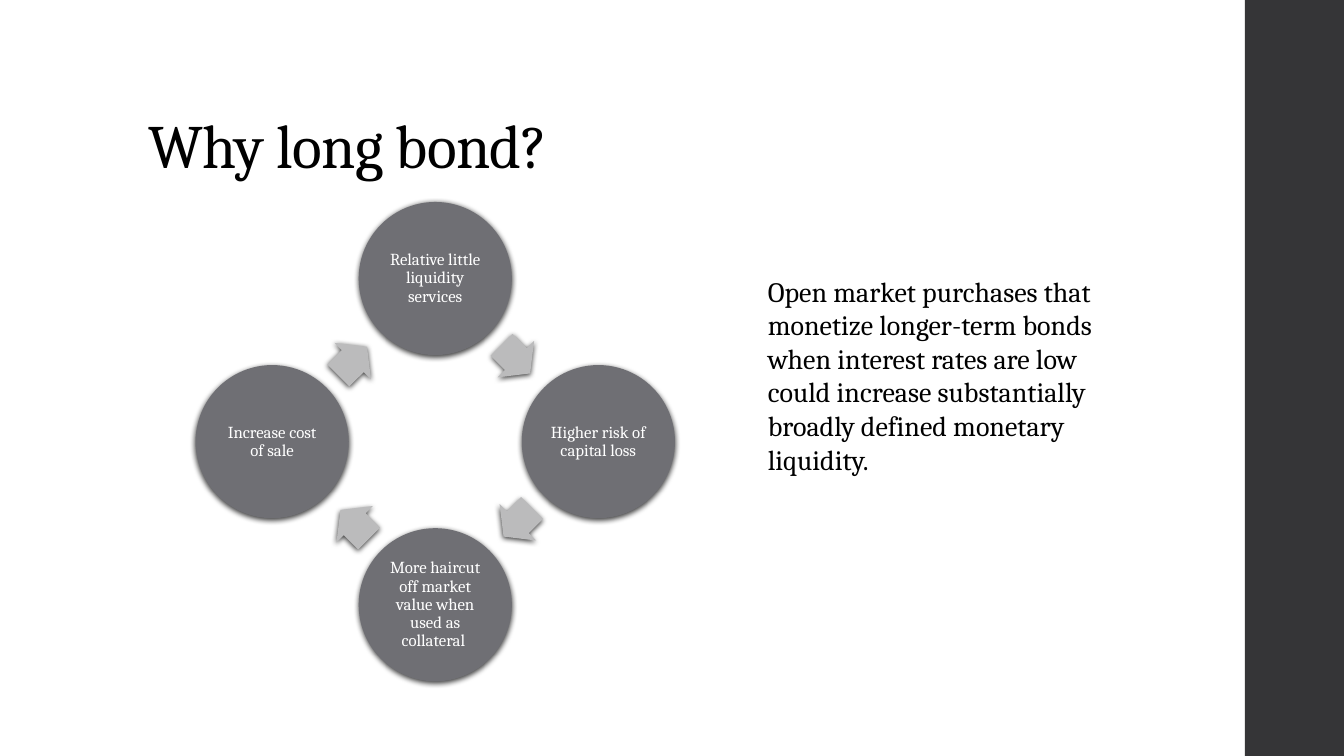
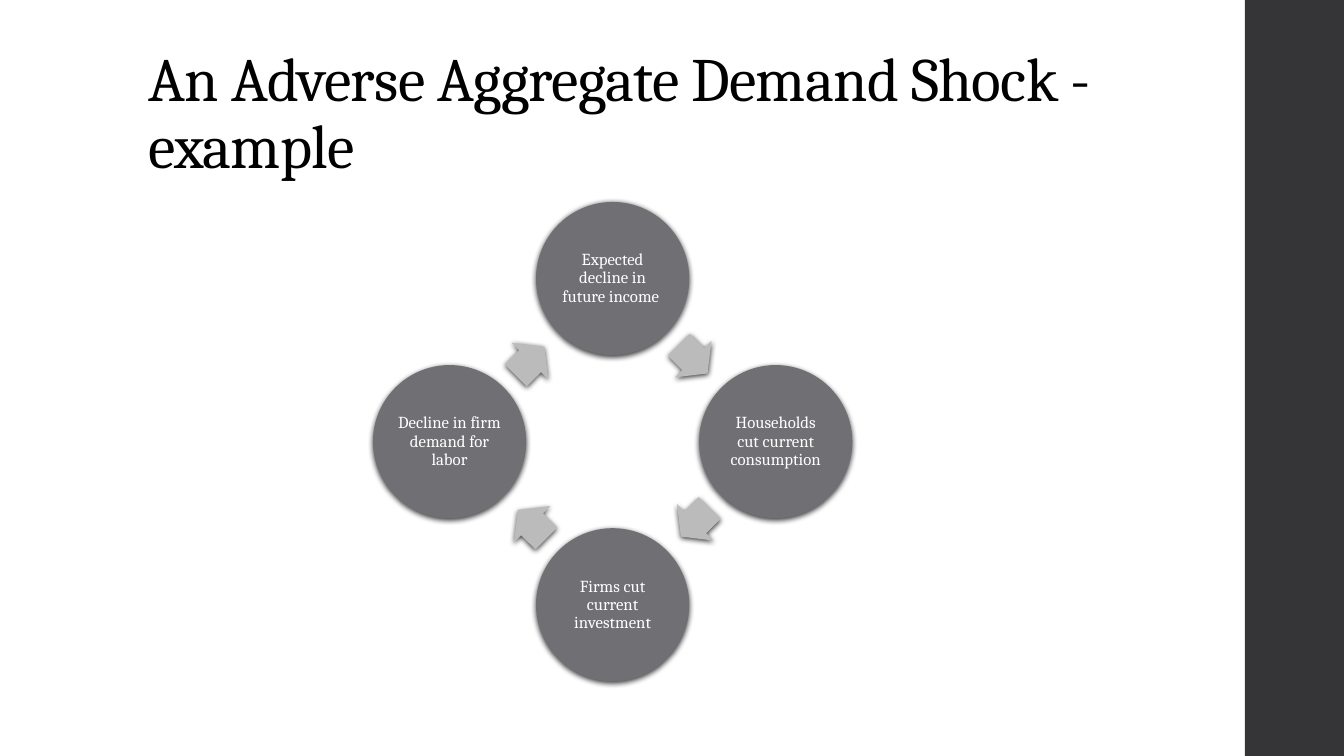
"""Build two slides that each show a four-step cycle beside a dark side band."""
import pptx
import pptx.dml.color
import pptx.enum.shapes
import pptx.enum.text
import pptx.oxml
import pptx.oxml.ns
import pptx.util

Cm, Pt = pptx.util.Cm, pptx.util.Pt
RGBColor = pptx.dml.color.RGBColor
MSO_SHAPE = pptx.enum.shapes.MSO_SHAPE
MSO_ANCHOR = pptx.enum.text.MSO_ANCHOR
PP_ALIGN = pptx.enum.text.PP_ALIGN

BLACK = RGBColor(0x00, 0x00, 0x00)
WHITE = RGBColor(0xFF, 0xFF, 0xFF)
BAND = RGBColor(0x35, 0x35, 0x37)
CIRCLE = RGBColor(0x6F, 0x6F, 0x74)
ARROW = RGBColor(0xBB, 0xBB, 0xBC)
FONT = "Cambria"

SHADOW = (
    f'<a:outerShdw {pptx.oxml.ns.nsdecls("a")} blurRad="{Pt(4)}" dist="{Pt(1.2)}" '
    'dir="5400000" algn="ctr" rotWithShape="0">'
    '<a:srgbClr val="000000"><a:alpha val="75000"/></a:srgbClr></a:outerShdw>'
)

INSET = Cm(0.05)
TITLE = {
    "frame": {"word_wrap": True, "vertical_anchor": MSO_ANCHOR.BOTTOM},
    "paragraph": {"alignment": PP_ALIGN.LEFT, "line_spacing": 0.9},
    "font": {"name": FONT, "size": Pt(44)},
    "color": BLACK,
}
STEP = {
    "frame": {"word_wrap": True, "vertical_anchor": MSO_ANCHOR.MIDDLE,
              "margin_left": INSET, "margin_right": INSET,
              "margin_top": INSET, "margin_bottom": INSET},
    "paragraph": {"alignment": PP_ALIGN.CENTER, "line_spacing": 0.9},
    "font": {"name": FONT, "size": Pt(12)},
    "color": WHITE,
}
BODY = {
    "frame": {"word_wrap": True, "vertical_anchor": MSO_ANCHOR.TOP},
    "paragraph": {"alignment": PP_ALIGN.LEFT},
    "font": {"name": FONT, "size": Pt(20)},
    "color": BLACK,
}

CENTER_Y = 11.13
RADIUS = 4.11
DIAMETER = 3.86
ARROW_W, ARROW_H = 1.02, 1.3

SLIDES = [
    {"title": "Why long bond?",
     "center_x": 10.97,
     "steps": ["Relative little liquidity services",
               "Higher risk of capital loss",
               "More haircut off market value when used as collateral ",
               "Increase cost of sale"],
     "body": "Open market purchases that monetize longer-term bonds when interest "
             "rates are low could increase substantially broadly defined monetary "
             "liquidity."},
    {"title": "An Adverse Aggregate Demand Shock - example",
     "center_x": 15.44,
     "steps": ["Expected decline in future income ",
               "Households cut current consumption",
               "Firms cut current investment",
               "Decline in firm demand for labor"],
     "body": None},
]


def add_shape(s, kind, box, color, shadow=True):
    sp = s.shapes.add_shape(kind, *map(Cm, box))
    sp.fill.solid()
    sp.fill.fore_color.rgb = color
    sp.line.fill.background()
    sp.shadow.inherit = False
    if shadow:
        effects = sp.element.spPr.find(pptx.oxml.ns.qn("a:effectLst"))
        effects.append(pptx.oxml.parse_xml(SHADOW))
    return sp


def write(sp, text, style):
    tf = sp.text_frame
    p = tf.paragraphs[0]
    r = p.add_run()
    r.text = text
    for target, part in ((tf, "frame"), (p, "paragraph"), (r.font, "font")):
        for name, value in style[part].items():
            setattr(target, name, value)
    r.font.color.rgb = style["color"]
    return r


prs = pptx.Presentation()
prs.slide_width = Cm(33.87)
prs.slide_height = Cm(19.05)

for content in SLIDES:
    s = prs.slides.add_slide(prs.slide_layouts[6])
    add_shape(s, MSO_SHAPE.RECTANGLE, (31.37, 0, 2.5, 19.05), BAND, shadow=False)

    title = s.shapes.add_textbox(Cm(3.5), Cm(1.02), Cm(26.92), Cm(3.68))
    r = write(title, content["title"], TITLE)
    r.font._element.set("spc", "-50")

    step_dx, step_dy = 0, -RADIUS
    arrow_dx, arrow_dy = 2.03, -2.08
    for i, text in enumerate(content["steps"]):
        x = content["center_x"] + step_dx - DIAMETER / 2
        y = CENTER_Y + step_dy - DIAMETER / 2
        sp = add_shape(s, MSO_SHAPE.OVAL, (x, y, DIAMETER, DIAMETER), CIRCLE)
        write(sp, text, STEP)

        x = content["center_x"] + arrow_dx - ARROW_W / 2
        y = CENTER_Y + arrow_dy - ARROW_H / 2
        sp = add_shape(s, MSO_SHAPE.RIGHT_ARROW, (x, y, ARROW_W, ARROW_H), ARROW)
        sp.adjustments[0] = 0.6
        sp.adjustments[1] = 0.5
        sp.rotation = 45 + 90 * i

        step_dx, step_dy = -step_dy, step_dx
        arrow_dx, arrow_dy = -arrow_dy, arrow_dx

    if content["body"]:
        body = s.shapes.add_textbox(Cm(19.1), Cm(6.78), Cm(8.71), Cm(5.37))
        write(body, content["body"], BODY)

prs.save("out.pptx")
